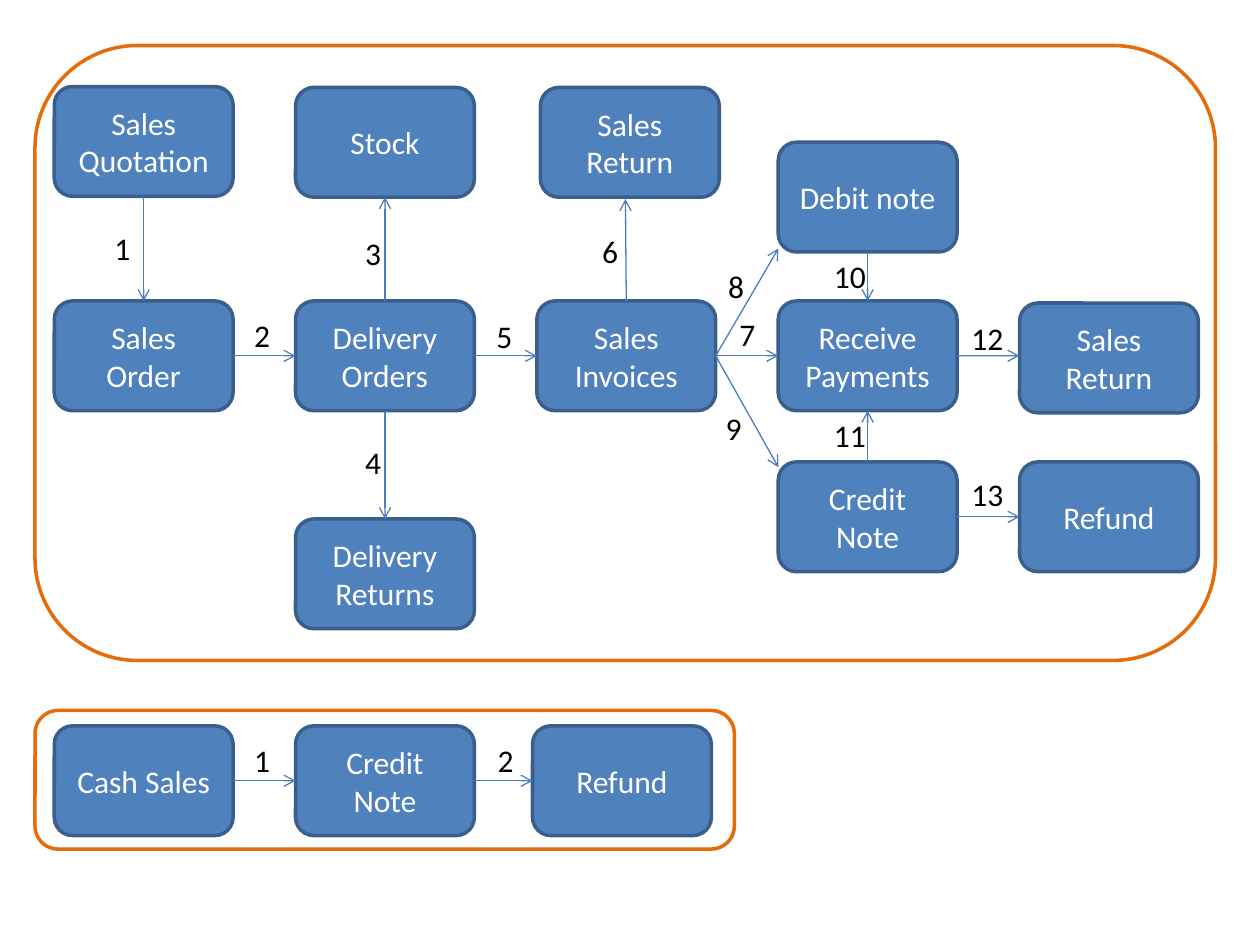
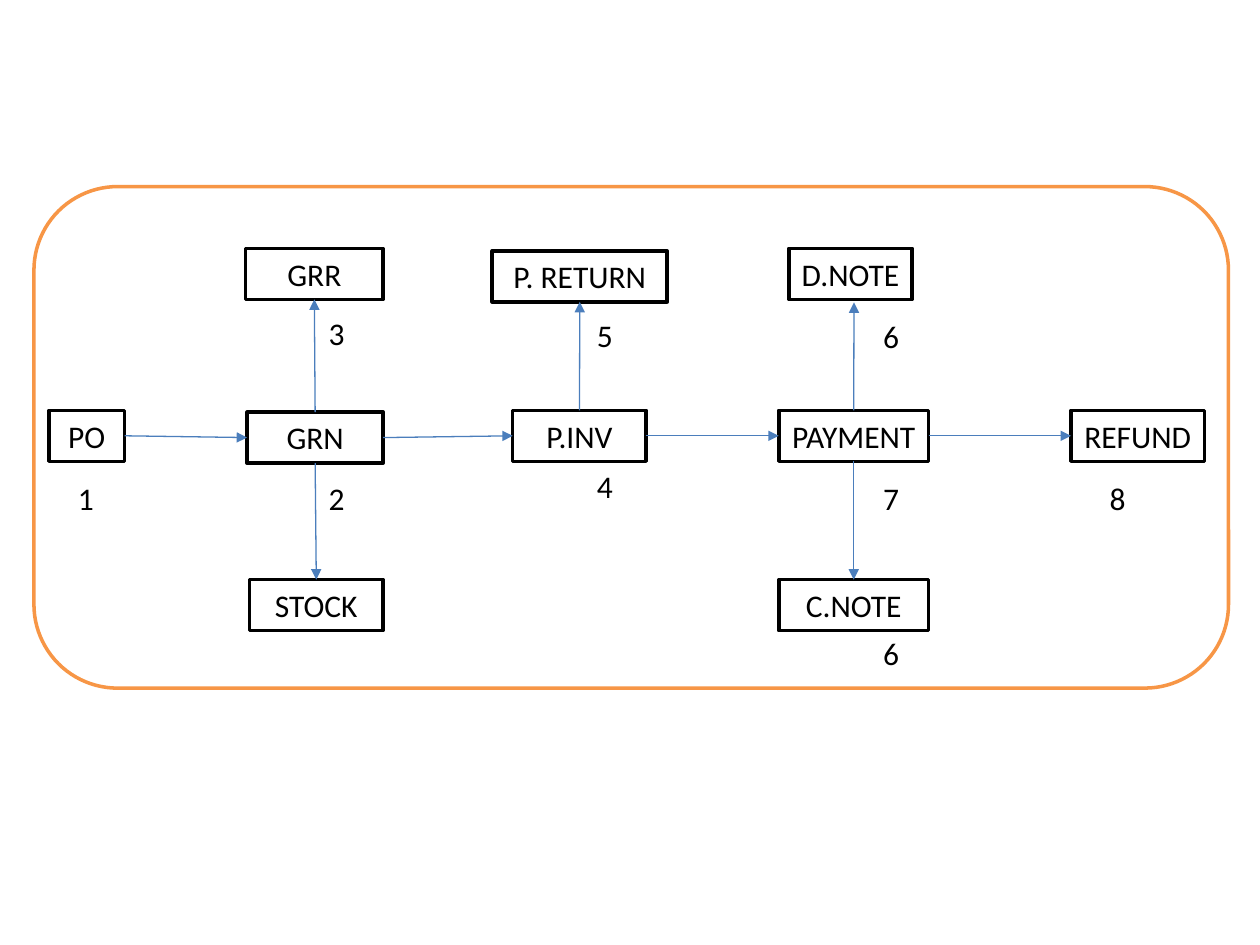
from pptx import Presentation
from pptx.dml.color import RGBColor
from pptx.enum.shapes import MSO_CONNECTOR, MSO_SHAPE
from pptx.enum.text import MSO_ANCHOR, PP_ALIGN
from pptx.util import Pt
from lxml.etree import SubElement
from pptx.oxml.ns import qn

COLOURS = {
    "step": "4F81BD",
    "step_edge": "3A5F8C",
    "arrow": "4B7EBC",
    "sales_frame": "E46C0A",
    "purchase_frame": "F79646",
    "white": "FFFFFF",
    "black": "000000",
}
TOP, LEFT, BOTTOM, RIGHT = range(4)
STEP_WIDTH, STEP_HEIGHT = 102.2, 62.7
COLUMNS = [31 + 137.9 * column for column in range(5)]
DOCUMENT_HEIGHT = 29.1


def colour(name):
    return RGBColor.from_string(COLOURS[name])


class FlowPage:
    font, size = "Calibri", 18

    def __init__(self, deck, arrowhead):
        self.page = deck.slides.add_slide(deck.slide_layouts[6])
        self.arrowhead = arrowhead
        self.boxes = {}

    def label(self, shape, text, ink, align, wrap):
        frame = shape.text_frame
        frame.text = text
        frame.word_wrap = wrap
        para = frame.paragraphs[0]
        para.alignment = align
        span = para.runs[0]
        span.font.name, span.font.size = self.font, Pt(self.size)
        span.font.color.rgb = colour(ink)

    def outline(self, kind, place, edge, fill=None):
        shape = self.page.shapes.add_shape(kind, *map(Pt, place))
        shape.shadow.inherit = False
        if fill:
            shape.fill.solid()
            shape.fill.fore_color.rgb = colour(fill)
        else:
            shape.fill.background()
        shape.line.color.rgb = colour(edge)
        shape.line.width = Pt(2)
        return shape

    def frame(self, place, edge):
        self.outline(MSO_SHAPE.ROUNDED_RECTANGLE, place, edge)

    def step(self, key, text, left, top):
        place = (left, top, STEP_WIDTH, STEP_HEIGHT)
        box = self.outline(MSO_SHAPE.ROUNDED_RECTANGLE, place, "step_edge", "step")
        box.text_frame.vertical_anchor = MSO_ANCHOR.MIDDLE
        self.label(box, text, "white", PP_ALIGN.CENTER, True)
        self.boxes[key] = box

    def document(self, text, left, top, width):
        place = (left, top, width, DOCUMENT_HEIGHT)
        box = self.outline(MSO_SHAPE.RECTANGLE, place, "black", "white")
        box.text_frame.vertical_anchor = MSO_ANCHOR.TOP
        self.label(box, text, "black", PP_ALIGN.CENTER, False)
        self.boxes[text] = box

    def number(self, text, left, top):
        width = 14.4 + 9.2 * len(text)
        box = self.page.shapes.add_textbox(Pt(left), Pt(top), Pt(width), Pt(DOCUMENT_HEIGHT))
        self.label(box, text, "black", PP_ALIGN.LEFT, False)

    def arrow(self, start, start_side, end, end_side=None):
        link = self.page.shapes.add_connector(MSO_CONNECTOR.STRAIGHT, 0, 0, 0, 0)
        link.begin_connect(self.boxes[start], start_side)
        if end_side is None:
            link.end_x, link.end_y = map(Pt, end)
        else:
            link.end_connect(self.boxes[end], end_side)
        link.line.color.rgb = colour("arrow")
        link.line.width = Pt(0.75)
        properties = link._element.spPr
        SubElement(properties.find(qn("a:ln")), qn("a:tailEnd"), type=self.arrowhead)
        SubElement(properties, qn("a:effectLst"))


def build_sales(deck):
    flow = FlowPage(deck, "arrow")
    first, second, third, fourth, fifth = COLUMNS
    main_row, cash_row = 172, 414.8
    for step in (
        ("quotation", "Sales Quotation", first, 49.5),
        ("order", "Sales Order", first, main_row),
        ("stock", "Stock", second, 50),
        ("delivery", "Delivery Orders", second, main_row),
        ("delivery return", "Delivery Returns", second, 296.6),
        ("invoice return", "Sales Return", 308.8, 50),
        ("invoice", "Sales Invoices", third, main_row),
        ("debit", "Debit note", fourth, 81.3),
        ("payment", "Receive Payments", fourth, main_row),
        ("credit", "Credit Note", fourth, 264),
        ("payment return", "Sales Return", fifth, 173.2),
        ("refund", "Refund", fifth, 264),
        ("cash sale", "Cash Sales", first, cash_row),
        ("cash credit", "Credit Note", second, cash_row),
        ("cash refund", "Refund", 304.3, cash_row),
    ):
        flow.step(*step)
    for link in (
        ("quotation", BOTTOM, "order", TOP),
        ("order", RIGHT, "delivery", LEFT),
        ("delivery", TOP, "stock", BOTTOM),
        ("delivery", BOTTOM, "delivery return", TOP),
        ("delivery", RIGHT, "invoice", LEFT),
        ("invoice", TOP, (357.4, 113.8)),
        ("invoice", RIGHT, "payment", LEFT),
        ("invoice", RIGHT, (444.8, 142)),
        ("invoice", RIGHT, (444.8, 267)),
        ("debit", BOTTOM, "payment", TOP),
        ("credit", TOP, "payment", BOTTOM),
        ("payment", RIGHT, (582.5, 203.3)),
        ("credit", RIGHT, "refund", LEFT),
        ("cash sale", RIGHT, "cash credit", LEFT),
        ("cash credit", RIGHT, "cash refund", LEFT),
    ):
        flow.arrow(*link)
    for number in (
        ("1", 58.3, 127.5), ("2", 138.2, 177), ("3", 201.6, 130.3),
        ("4", 201.6, 249.8), ("5", 276.5, 177.8), ("6", 337, 128.9),
        ("7", 415.4, 176.4), ("8", 409, 149), ("9", 407.5, 230.4),
        ("10", 469.4, 143.3), ("11", 469.4, 234), ("12", 548, 178.6),
        ("13", 548, 267.8), ("1", 138.2, 419.8), ("2", 277.2, 419.8),
    ):
        flow.number(*number)
    flow.frame((20, 26, 674.6, 351.4), "sales_frame")
    flow.frame((20, 406, 399.6, 79.2), "sales_frame")


def build_purchase(deck):
    flow = FlowPage(deck, "triangle")
    flow.frame((19.4, 106.6, 682.6, 286.6), "purchase_frame")
    upper, middle, lower = 142, 234.5, 331.2
    for document in (
        ("PO", 28, middle, 43.2),
        ("GRN", 141.2, middle + 1, 77.8),
        ("GRR", 140.4, upper, 78.5),
        ("STOCK", 142.6, lower, 76.3),
        ("P.INV", 293, middle, 76.3),
        ("P. RETURN", 281.3, upper + 1.4, 100),
        ("PAYMENT", 445, middle, 85.7),
        ("D.NOTE", 450.7, upper, 70.6),
        ("C.NOTE", 445, lower, 85.7),
        ("REFUND", 612, middle, 76.3),
    ):
        flow.document(*document)
    chain = ["PO", "GRN", "P.INV", "PAYMENT", "REFUND"]
    for start, end in zip(chain, chain[1:]):
        flow.arrow(start, RIGHT, end, LEFT)
    for start, end in (("GRN", "GRR"), ("P.INV", "P. RETURN")):
        flow.arrow(start, TOP, end, BOTTOM)
    flow.arrow("PAYMENT", TOP, (488, 172.8))
    for start, end in (("GRN", "STOCK"), ("PAYMENT", "C.NOTE")):
        flow.arrow(start, BOTTOM, end, TOP)
    for number in (
        ("1", 37.4, 270), ("2", 180.7, 270), ("3", 180.7, 175.7),
        ("4", 334, 263.5), ("5", 334, 177), ("6", 497.5, 177.8),
        ("7", 497.5, 270), ("6", 497.5, 358.6), ("8", 627, 270),
    ):
        flow.number(*number)


def main():
    deck = Presentation()
    deck.slide_width, deck.slide_height = Pt(720), Pt(540)
    build_sales(deck)
    build_purchase(deck)
    deck.save("out.pptx")


if __name__ == "__main__":
    main()
